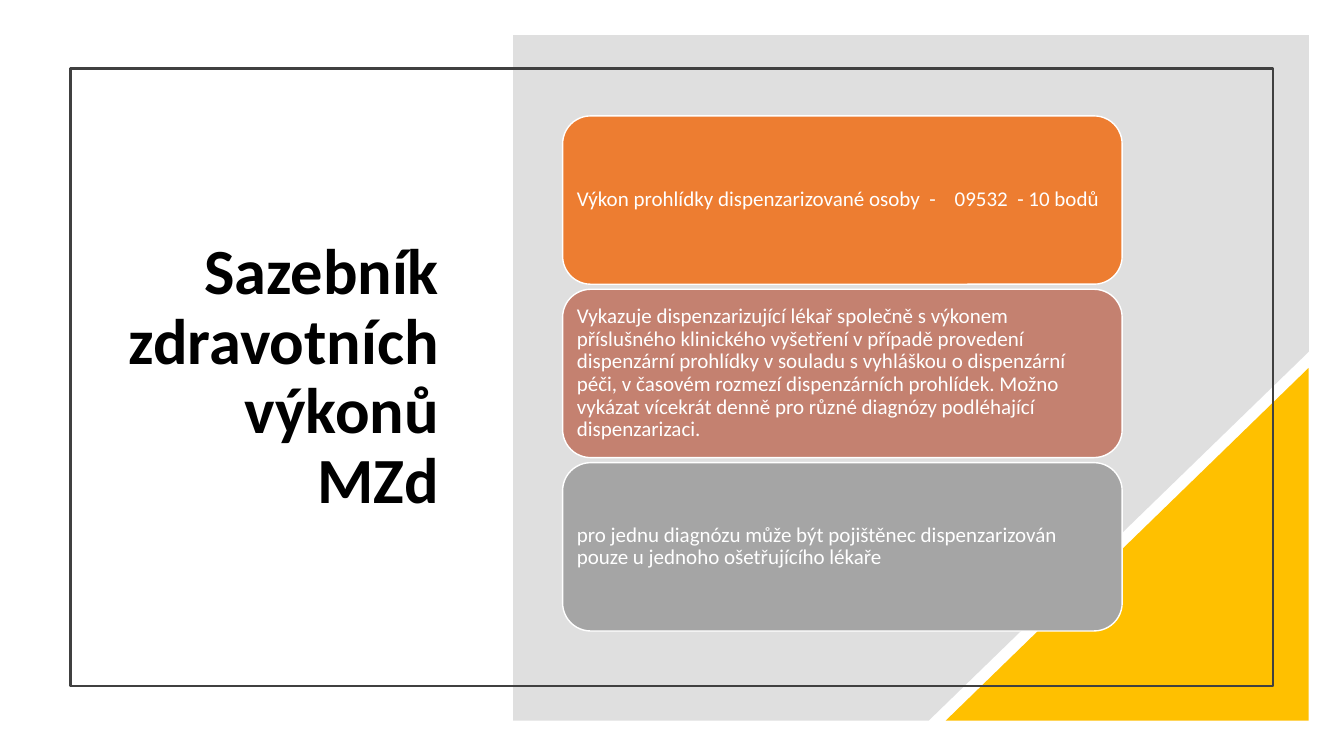
from lxml import etree
from pptx import Presentation
from pptx.dml.color import RGBColor
from pptx.enum.shapes import MSO_SHAPE
from pptx.enum.text import MSO_ANCHOR, PP_ALIGN
from pptx.oxml.ns import qn
from pptx.util import Inches, Pt

RECTANGLE = MSO_SHAPE.RECTANGLE
ROUNDED = MSO_SHAPE.ROUNDED_RECTANGLE
TRIANGLE = MSO_SHAPE.RIGHT_TRIANGLE
MIDDLE = MSO_ANCHOR.MIDDLE
LEFT, RIGHT = PP_ALIGN.LEFT, PP_ALIGN.RIGHT

FONT = "Calibri"
PANEL_CORNERS = [(5.09, 0.35), (12.98, 0.35), (12.98, 3.49), (9.21, 7.15), (5.09, 7.15)]
CARD_TOP, CARD_STEP = 1.15, 1.72
CARDS = [
    ("ED7D31", "Výkon prohlídky dispenzarizované osoby  -    09532  - 10 bodů"),
    ("C48170", "Vykazuje dispenzarizující lékař společně s výkonem příslušného "
               "klinického vyšetření v případě provedení dispenzární prohlídky v souladu "
               "s vyhláškou o dispenzární péči, v časovém rozmezí dispenzárních prohlídek. "
               "Možno vykázat vícekrát denně pro různé diagnózy podléhající dispenzarizaci."),
    ("A5A5A5", "pro jednu diagnózu může být pojištěnec dispenzarizován pouze "
               "u jednoho ošetřujícího lékaře"),
]


def color(hex_code):
    return RGBColor.from_string(hex_code)


def paint(shape, fill=None, line=None, width=1):
    shape.shadow.inherit = False
    if fill:
        shape.fill.solid()
        shape.fill.fore_color.rgb = color(fill)
    else:
        shape.fill.background()
    if line:
        shape.line.color.rgb = color(line)
        shape.line.width = Pt(width)
    else:
        shape.line.fill.background()


def add_box(page, kind, bounds, **look):
    box = page.shapes.add_shape(kind, *map(Inches, bounds))
    paint(box, **look)
    return box


def write(box, text, align, margin, **font):
    frame = box.text_frame
    frame.word_wrap = True
    frame.vertical_anchor = MIDDLE
    for side in ("left", "top", "right", "bottom"):
        setattr(frame, f"margin_{side}", Inches(margin))
    para = frame.paragraphs[0]
    para.alignment = align
    para.line_spacing = 0.9
    span = para.add_run()
    span.text = text
    span.font.color.rgb = color(font.pop("ink"))
    for name, value in {"name": FONT, **font}.items():
        setattr(span.font, name, value)


def add_panel(page):
    """Translucent grey area with its lower right corner cut off."""
    builder = page.shapes.build_freeform(
        *map(Inches, PANEL_CORNERS[0]), scale=1.0)
    builder.add_line_segments(
        [(Inches(x), Inches(y)) for x, y in PANEL_CORNERS[1:]], close=True)
    panel = builder.convert_to_shape()
    paint(panel, fill="808080")
    tint = panel.element.spPr.find(qn("a:solidFill"))[0]
    etree.SubElement(tint, qn("a:alpha")).set("val", "25000")


def add_corner(page):
    corner = add_box(page, TRIANGLE, (9.38, 3.65, 3.6, 3.5), fill="FFC000")
    corner.element.spPr.find(qn("a:xfrm")).set("flipH", "1")


def add_title(page):
    title = page.shapes.add_textbox(*map(Inches, (1.1, 1.3, 3.35, 4.9)))
    write(title, "Sazebník zdravotních výkonů MZd", RIGHT, 0.1,
          size=Pt(46), bold=True, ink="000000")


def add_cards(page):
    for row, (fill, text) in enumerate(CARDS):
        bounds = (5.58, CARD_TOP + row * CARD_STEP, 5.55, 1.67)
        card = add_box(page, ROUNDED, bounds, fill=fill, line="FFFFFF")
        write(card, text, LEFT, 0.06, size=Pt(15), ink="FFFFFF")


def main():
    deck = Presentation()
    deck.slide_width, deck.slide_height = Inches(13.33), Inches(7.5)
    page = deck.slides.add_slide(deck.slide_layouts[6])
    add_title(page)
    add_panel(page)
    add_corner(page)
    add_box(page, RECTANGLE, (0.7, 0.68, 11.93, 6.13), line="404040", width=1.5)
    add_cards(page)
    deck.save("out.pptx")


if __name__ == "__main__":
    main()
